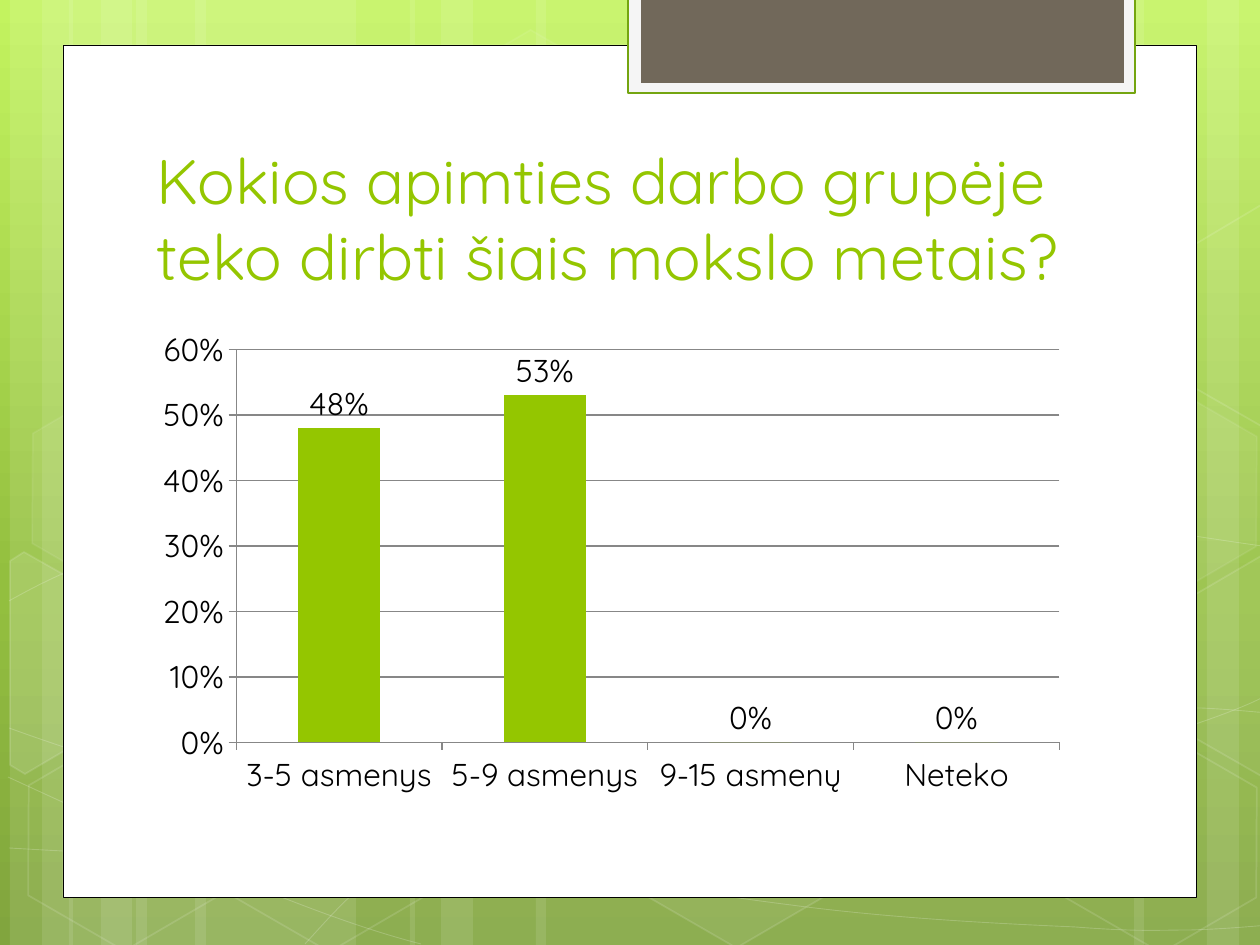
from pptx import Presentation
from pptx.chart.data import CategoryChartData
from pptx.dml.color import RGBColor
from pptx.enum.chart import XL_CHART_TYPE, XL_LABEL_POSITION, XL_TICK_MARK
from pptx.enum.shapes import MSO_SHAPE
from pptx.enum.text import MSO_ANCHOR, MSO_AUTO_SIZE, PP_ALIGN
from pptx.oxml.ns import qn
from pptx.util import Pt
from lxml.etree import SubElement
from copy import deepcopy

PX = 914400 / 126
W, H = 1260, 945
FONT = "Quicksand"
COLORS = {
    "white": "FFFFFF", "black": "000000", "green": "94C600", "edge": "74A510",
    "pale": "F5F5F5", "brown": "71685A", "axis": "878787",
}
BACKGROUND = [(0, "C3F35F"), (0.62, "93BF3F"), (1, "81A53E")]

# Light stripes: left, width
STRIPES = [(136, 220), (10, 63), (42, 105), (195, 220), (69, 63), (101, 105),
           (924, 220), (1207, 63), (1134, 105), (536, 388), (410, 63), (441, 105)]
# Waves: start point, then cubic segments (two controls and an end)
WAVES = [
    [(9, 848), (77, 852, 145, 856, 239, 854), (334, 853, 451, 851, 577, 838),
     (703, 825, 882, 801, 998, 777), (1113, 753, 1231, 716, 1269, 694)],
    [(9, 601), (45, 581, 82, 562, 152, 543), (224, 521, 326, 496, 437, 488),
     (549, 479, 685, 478, 824, 488), (963, 498, 1193, 537, 1269, 547)],
    [(8, 777), (160, 847, 311, 916, 421, 944)],
    [(9, 728), (48, 742, 88, 756, 161, 776), (234, 795, 344, 827, 450, 848),
     (554, 869, 687, 892, 791, 905), (896, 919, 1008, 924, 1075, 927),
     (1140, 932, 1158, 930, 1191, 930), (1223, 929, 1246, 927, 1269, 925)],
    [(305, 944), (328, 919, 350, 893, 381, 871), (411, 848, 454, 823, 489, 805),
     (524, 788, 546, 780, 592, 767), (638, 754, 722, 737, 766, 728),
     (811, 720, 818, 720, 857, 717), (896, 713, 958, 709, 1000, 708),
     (1045, 707, 1116, 708, 1116, 708), (1144, 708, 1173, 708, 1201, 708),
     (1223, 709, 1245, 711, 1256, 712), (1267, 713, 1264, 712, 1268, 713)],
]
# Hexagons: left, top, fill opacity, line opacity
HEXAGONS = [(421, 45, 4, 8), (626, 742, 6, 12), (14, 745, 0, 12), (18, 393, 7, 8),
            (219, 746, 0, 12), (949, 571, 10, 12), (1051, 747, 0, 12), (1051, 396, 7, 8)]
# Hexagons cut by the slide edge: corners, fill opacity
CUT_HEXAGONS = [
    ([(10, 561), (24, 552), (121, 607), (120, 718), (25, 774), (10, 765)], 10),
    ([(1167, 611), (1261, 556), (1271, 562), (1271, 772), (1263, 777), (1167, 722)], 4),
    ([(1167, 261), (1261, 205), (1273, 212), (1271, 422), (1263, 427), (1167, 372)], 0),
]


def px(*values):
    return [round(v * PX) for v in values]


def rgb(name):
    return RGBColor.from_string(COLORS[name])


def set_format(obj, **values):
    for name, value in values.items():
        setattr(obj, name, value)


def paint(fill, color, opacity=100):
    if not opacity:
        fill.background()
        return
    fill.solid()
    fill.fore_color.rgb = rgb(color)
    if opacity < 100:
        # The colour element hangs under the solid fill
        clr = fill._xPr.find(".//" + qn("a:srgbClr"))
        SubElement(clr, qn("a:alpha"), val=str(opacity * 1000))


def style(sp, fill="white", opacity=100, line=None, width=1, line_opacity=100):
    sp.shadow.inherit = False
    paint(sp.fill, fill, opacity)
    if line:
        sp.line.width = Pt(width)
        paint(sp.line.fill, line, line_opacity)
    else:
        sp.line.fill.background()


def add_box(slide, box, shape=MSO_SHAPE.RECTANGLE, **look):
    sp = slide.shapes.add_shape(shape, *px(*box))
    style(sp, **look)
    return sp


def add_outline(slide, points, close, **look):
    builder = slide.shapes.build_freeform(*points[0], scale=PX)
    builder.add_line_segments(points[1:], close=close)
    sp = builder.convert_to_shape()
    style(sp, **look)
    return sp


def add_wave(slide, wave):
    points = [wave[0]] + [segment[-2:] for segment in wave[1:]]
    sp = add_outline(slide, points, False, opacity=0,
                     line="white", width=0.5, line_opacity=20)
    left, top = (min(values) for values in zip(*points))
    # Turn each straight segment into a cubic curve
    for line, (x1, y1, x2, y2, _, _) in zip(list(sp._element.iter(qn("a:lnTo"))), wave[1:]):
        line.tag = qn("a:cubicBezTo")
        end = line[0]
        for x, y in ((x1, y1), (x2, y2)):
            control = deepcopy(end)
            control.set("x", str(x - left))
            control.set("y", str(y - top))
            end.addprevious(control)


def add_background(slide):
    fill = slide.background.fill
    fill.gradient()
    fill.gradient_angle = 270
    first = fill._xPr.find(".//" + qn("a:gs"))
    first.addnext(deepcopy(first))
    for stop, (position, color) in zip(fill.gradient_stops, BACKGROUND):
        stop.position = position
        stop.color.rgb = RGBColor.from_string(color)


def add_decor(slide):
    for left, width in STRIPES:
        add_box(slide, (left, 0, width, H), opacity=10)
    for wave in WAVES:
        add_wave(slide, wave)
    for left, top, opacity, line_opacity in HEXAGONS:
        sp = add_box(slide, (left, top, 220, 191), MSO_SHAPE.HEXAGON, opacity=opacity,
                     line="white", line_opacity=line_opacity)
        sp.rotation = 30
        sp.adjustments[0] = 0.285
    for points, opacity in CUT_HEXAGONS:
        add_outline(slide, points, True, opacity=opacity, line="white", line_opacity=12)
    # Card and its tab
    add_box(slide, (63, 45, 1134, 853), line="black", width=0.5)
    add_box(slide, (628, -2, 507, 95), fill="pale", line="edge", width=1.25)
    add_box(slide, (641, -2, 483, 85), fill="brown")


def move_to_layout(slide):
    tree = slide.slide_layout.shapes._spTree
    for sp in list(slide.shapes):
        if not sp.is_placeholder:
            tree.append(sp._element)


def add_title(slide, text, box):
    sp = slide.shapes.title
    set_format(sp, **dict(zip(("left", "top", "width", "height"), px(*box))))
    tf = sp.text_frame
    set_format(tf, text=text, word_wrap=True, auto_size=MSO_AUTO_SIZE.NONE,
               vertical_anchor=MSO_ANCHOR.BOTTOM)
    p = tf.paragraphs[0]
    p.alignment = PP_ALIGN.LEFT
    r = p.runs[0]
    set_format(r.font, size=Pt(36), name=FONT)
    r.font.color.rgb = rgb("green")


def add_column_chart(slide, box, cats, vals):
    data = CategoryChartData(number_format="0%")
    data.categories = cats
    data.add_series("Series 1", vals)
    chart = slide.shapes.add_chart(XL_CHART_TYPE.COLUMN_CLUSTERED, *px(*box), data).chart
    set_format(chart, has_legend=False, has_title=False)
    set_format(chart.font, size=Pt(18), name=FONT)
    chart.font.color.rgb = rgb("black")

    # Axes and gridlines
    value_axis = chart.value_axis
    value_axis.has_major_gridlines = True
    set_format(value_axis.tick_labels, number_format="0%", number_format_is_linked=False)
    for axis in (value_axis, chart.category_axis):
        set_format(axis, major_tick_mark=XL_TICK_MARK.OUTSIDE,
                   minor_tick_mark=XL_TICK_MARK.NONE)
    for item in (value_axis, chart.category_axis, value_axis.major_gridlines):
        item.format.line.width = Pt(0.75)
        item.format.line.color.rgb = rgb("axis")

    # Columns and their labels
    plot = chart.plots[0]
    set_format(plot, gap_width=150, vary_by_categories=False, has_data_labels=True)
    set_format(plot.data_labels, show_value=True, number_format="0%",
               number_format_is_linked=False, position=XL_LABEL_POSITION.OUTSIDE_END)
    paint(plot.series[0].format.fill, "green")


def main():
    prs = Presentation()
    prs.slide_width, prs.slide_height = px(W, H)
    slide = prs.slides.add_slide(prs.slide_layouts[5])
    add_background(slide)
    add_decor(slide)
    move_to_layout(slide)
    add_title(slide, "Kokios apimties darbo grupėje teko dirbti šiais mokslo metais?",
              (144, 141, 968, 158))
    add_column_chart(slide, (144, 320, 934, 484),
                     ["3-5 asmenys", "5-9 asmenys", "9-15 asmenų", "Neteko"],
                     [0.48, 0.53, 0, 0])
    prs.save("out.pptx")


if __name__ == "__main__":
    main()
